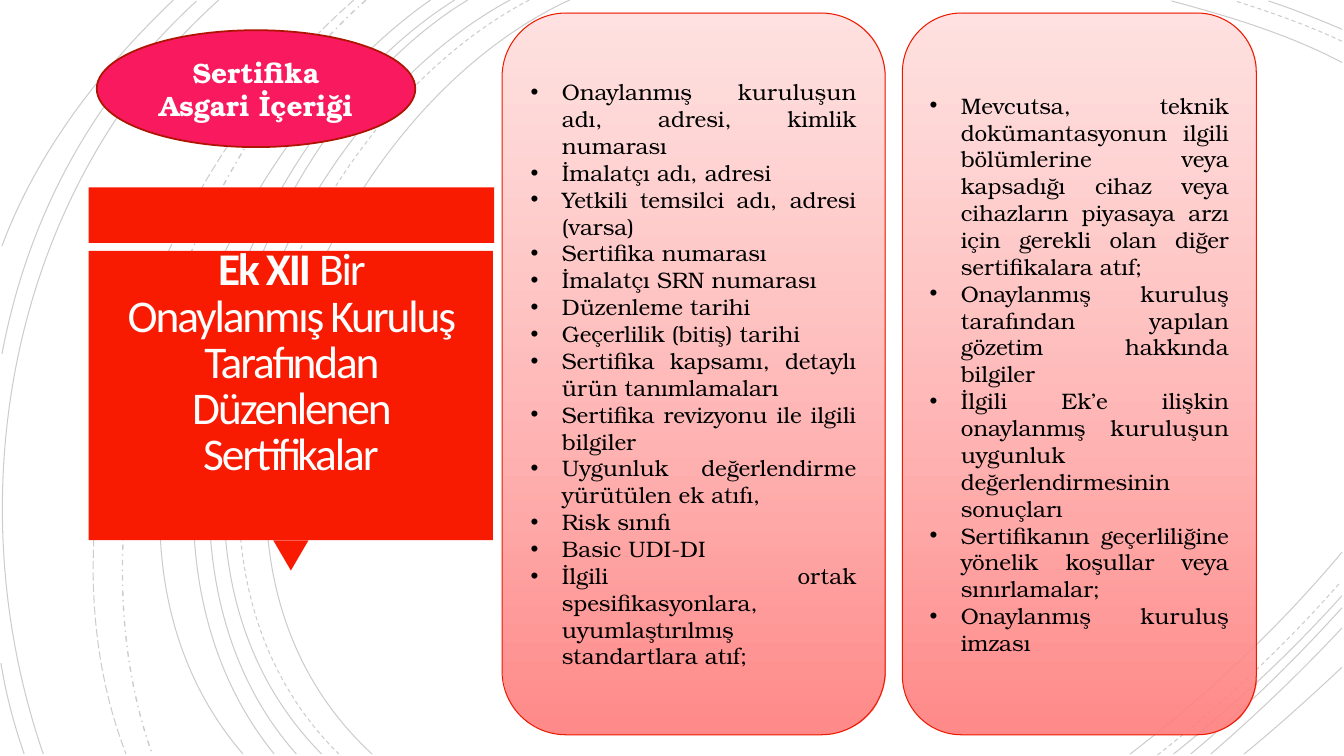
from lxml.etree import SubElement
from pptx import Presentation
from pptx.dml.color import RGBColor
from pptx.enum.dml import MSO_LINE
from pptx.enum.shapes import MSO_SHAPE
from pptx.enum.text import MSO_ANCHOR, PP_ALIGN
from pptx.oxml.ns import qn
from pptx.util import Inches, Pt

BLACK = RGBColor(0x00, 0x00, 0x00)
WHITE = RGBColor(0xFF, 0xFF, 0xFF)
TITLE_WHITE = RGBColor(0xFF, 0xFE, 0xFF)
RED = RGBColor(0xF8, 0x1B, 0x02)
CARD_EDGE = RGBColor(0xED, 0x1A, 0x02)
CARD_TOP = RGBColor(0xFF, 0xCE, 0xCD)
CARD_BOTTOM = RGBColor(0xFF, 0x80, 0x7F)
PINK = RGBColor(0xF9, 0x19, 0x5E)
PINK_EDGE = RGBColor(0xAF, 0x13, 0x01)

SOLID_ARCS = [
    (5.65, 0, 3.15, 1.15, 1.43, 5.4, 3.69, 7.48),
    (13.31, 0.62, 12.78, 0.34, 12.18, 0.16, 11.62, 0.01),
    (11.21, 7.48, 11.97, 6.9, 12.69, 6.22, 13.31, 5.48),
    (5.06, 0, 2.7, 1.27, 1.1, 5.37, 3.19, 7.48),
    (13.31, 0.29, 13.07, 0.19, 12.83, 0.09, 12.58, 0.01),
    (11.64, 7.48, 12.23, 7.01, 12.8, 6.48, 13.31, 5.91),
    (4.64, 0, 2.44, 1.33, 1.1, 5.41, 2.94, 7.48),
    (11.81, 7.48, 12.34, 7.04, 12.84, 6.55, 13.31, 6.03),
    (4.51, 0, 2.31, 1.38, 0.97, 5.33, 2.72, 7.48),
    (12.01, 7.48, 12.46, 7.09, 12.9, 6.67, 13.31, 6.23),
    (4.27, 0, 2.17, 1.47, 0.53, 5.29, 2.41, 7.48),
    (12.34, 7.48, 12.67, 7.21, 12.99, 6.92, 13.31, 6.62),
    (2.17, 0, 0.11, 1.85, -0.46, 4.9, 0.43, 7.48),
    (1.95, 0.01, 0.92, 0.96, 0.28, 2.14, 0.02, 3.51),
    (0.01, 6.58, 0.06, 6.89, 0.14, 7.19, 0.24, 7.48),
    (1.72, 0, 1, 0.69, 0.37, 1.5, 0.02, 2.44),
]
DASHED_ARCS = [
    (5.25, 0, 2.85, 1.25, 1.23, 5.37, 3.36, 7.48),
    (13.31, 0.41, 12.97, 0.25, 12.6, 0.12, 12.25, 0.01),
    (11.48, 7.49, 12.13, 6.98, 12.75, 6.4, 13.3, 5.77),
]
DASH_DOT_ARC = (3.63, 0, 1.76, 1.66, 0.65, 5.09, 1.51, 7.48)
LONG_DASH_ARC = (3.51, 0, 1.57, 1.69, 0.29, 4.99, 1.25, 7.48)

CERTIFICATE_ITEMS = [
    "Onaylanmış kuruluşun adı, adresi, kimlik numarası",
    "İmalatçı adı, adresi",
    "Yetkili temsilci adı, adresi (varsa)",
    "Sertifika numarası",
    "İmalatçı SRN numarası",
    "Düzenleme tarihi",
    "Geçerlilik (bitiş) tarihi",
    "Sertifika kapsamı, detaylı ürün tanımlamaları",
    "Sertifika revizyonu ile ilgili bilgiler",
    "Uygunluk değerlendirme yürütülen ek atıfı,",
    "Risk sınıfı",
    "Basic UDI-DI",
    "İlgili ortak spesifikasyonlara, uyumlaştırılmış standartlara atıf;",
]
FURTHER_ITEMS = [
    "Mevcutsa, teknik dokümantasyonun ilgili bölümlerine veya kapsadığı cihaz "
    "veya cihazların piyasaya arzı için gerekli olan diğer sertifikalara atıf;",
    "Onaylanmış kuruluş tarafından yapılan gözetim hakkında bilgiler",
    "İlgili Ek’e ilişkin onaylanmış kuruluşun uygunluk değerlendirmesinin sonuçları",
    "Sertifikanın geçerliliğine yönelik koşullar veya sınırlamalar;",
    "Onaylanmış kuruluş imzası",
]


def add_span(para, text, font="TeX Gyre Bonum", size=16, color=BLACK, bold=False, spacing=0):
    span = para.add_run()
    span.text = text
    span.font.name = font
    span.font.size = Pt(size)
    span.font.color.rgb = color
    span.font.bold = bold
    if spacing:
        span.font._element.set("spc", str(int(spacing * 100)))


def set_opacity(fill_element, percents):
    for color, percent in zip(fill_element.iter(qn("a:srgbClr")), percents):
        SubElement(color, qn("a:alpha")).set("val", str(percent * 1000))


class CertificateSlide:
    """Draws the elements of the certificate slide in one shared style."""

    def __init__(self, deck):
        self.page = deck.slides.add_slide(deck.slide_layouts[6])
        self.shapes = self.page.shapes

    def arc(self, points, dash=MSO_LINE.SOLID, width=0.75):
        start, *others = [(Inches(x), Inches(y)) for x, y in zip(points[::2], points[1::2])]
        builder = self.shapes.build_freeform(*start)
        builder.add_line_segments(others, close=False)
        curve = builder.convert_to_shape()
        segments = list(curve._element.iter(qn("a:lnTo")))
        outline = segments[0].getparent()
        bezier = SubElement(outline, qn("a:cubicBezTo"))
        for segment in segments:
            bezier.append(segment[0])
            outline.remove(segment)
        curve.shadow.inherit = False
        curve.fill.background()
        curve.line.color.rgb = BLACK
        curve.line.width = Pt(width)
        curve.line.dash_style = dash
        set_opacity(curve.line._ln, [20])

    def shape(self, kind, left, top, width, height, fill=None, edge=None, edge_width=0.75):
        box = self.shapes.add_shape(
            kind, Inches(left), Inches(top), Inches(width), Inches(height))
        box.shadow.inherit = False
        if fill is not None:
            box.fill.solid()
            box.fill.fore_color.rgb = fill
        if edge is None:
            box.line.fill.background()
        else:
            box.line.color.rgb = edge
            box.line.width = Pt(edge_width)
        box.text_frame.word_wrap = True
        box.text_frame.vertical_anchor = MSO_ANCHOR.MIDDLE
        return box

    def card(self, left, width, items):
        box = self.shape(MSO_SHAPE.ROUNDED_RECTANGLE, left, 0.13, width, 7.16, edge=CARD_EDGE)
        box.fill.gradient()
        box.fill.gradient_angle = 270
        for stop, color in zip(box.fill.gradient_stops, (CARD_TOP, CARD_BOTTOM)):
            stop.color.rgb = color
        set_opacity(box._element.spPr.find(qn("a:gradFill")), [60, 92])
        frame = box.text_frame
        for index, item in enumerate(items):
            para = frame.add_paragraph() if index else frame.paragraphs[0]
            para.alignment = PP_ALIGN.JUSTIFY
            properties = para._p.get_or_add_pPr()
            properties.set("marL", str(Inches(0.31)))
            properties.set("indent", str(Inches(-0.31)))
            SubElement(properties, qn("a:buFont")).set("typeface", "Arial")
            SubElement(properties, qn("a:buChar")).set("char", "•")
            add_span(para, item)

    def title(self, lead, rest):
        box = self.shapes.add_textbox(Inches(0.97), Inches(2.57), Inches(3.83), Inches(2.69))
        frame = box.text_frame
        frame.word_wrap = True
        frame.vertical_anchor = MSO_ANCHOR.MIDDLE
        frame.margin_left = frame.margin_right = Inches(0.25)
        frame.margin_top = 0
        frame.margin_bottom = Inches(0.6)
        para = frame.paragraphs[0]
        para.alignment = PP_ALIGN.CENTER
        para.line_spacing = 0.85
        for text, bold in ((lead, True), (rest, False)):
            add_span(para, text, font="Calibri", size=32.4, color=TITLE_WHITE,
                     bold=bold, spacing=-1.5)

    def badge(self, text):
        box = self.shape(MSO_SHAPE.OVAL, 0.96, 0.3, 3.16, 1.16, PINK, PINK_EDGE, 1.25)
        para = box.text_frame.paragraphs[0]
        para.alignment = PP_ALIGN.CENTER
        add_span(para, text, size=20, color=WHITE, bold=True)


def main():
    deck = Presentation()
    deck.slide_width = Inches(13.33)
    deck.slide_height = Inches(7.5)
    slide = CertificateSlide(deck)
    for points in SOLID_ARCS:
        slide.arc(points)
    for points in DASHED_ARCS:
        slide.arc(points, MSO_LINE.DASH)
    slide.arc(DASH_DOT_ARC, MSO_LINE.DASH_DOT, 1)
    slide.arc(LONG_DASH_ARC, MSO_LINE.LONG_DASH)
    slide.shape(MSO_SHAPE.RECTANGLE, 0.88, 1.86, 4.02, 0.55, RED)
    pointer = slide.shape(MSO_SHAPE.ISOSCELES_TRIANGLE, 2.71, 5.36, 0.35, 0.3, RED)
    pointer.rotation = 180
    slide.shape(MSO_SHAPE.RECTANGLE, 0.88, 2.49, 4.01, 2.87, RED)
    slide.title("Ek XII ", "Bir Onaylanmış Kuruluş Tarafından Düzenlenen Sertifikalar")
    slide.card(8.95, 3.51, FURTHER_ITEMS)
    slide.card(4.98, 3.8, CERTIFICATE_ITEMS)
    slide.badge("Sertifika Asgari İçeriği")
    deck.save("out.pptx")


if __name__ == "__main__":
    main()
